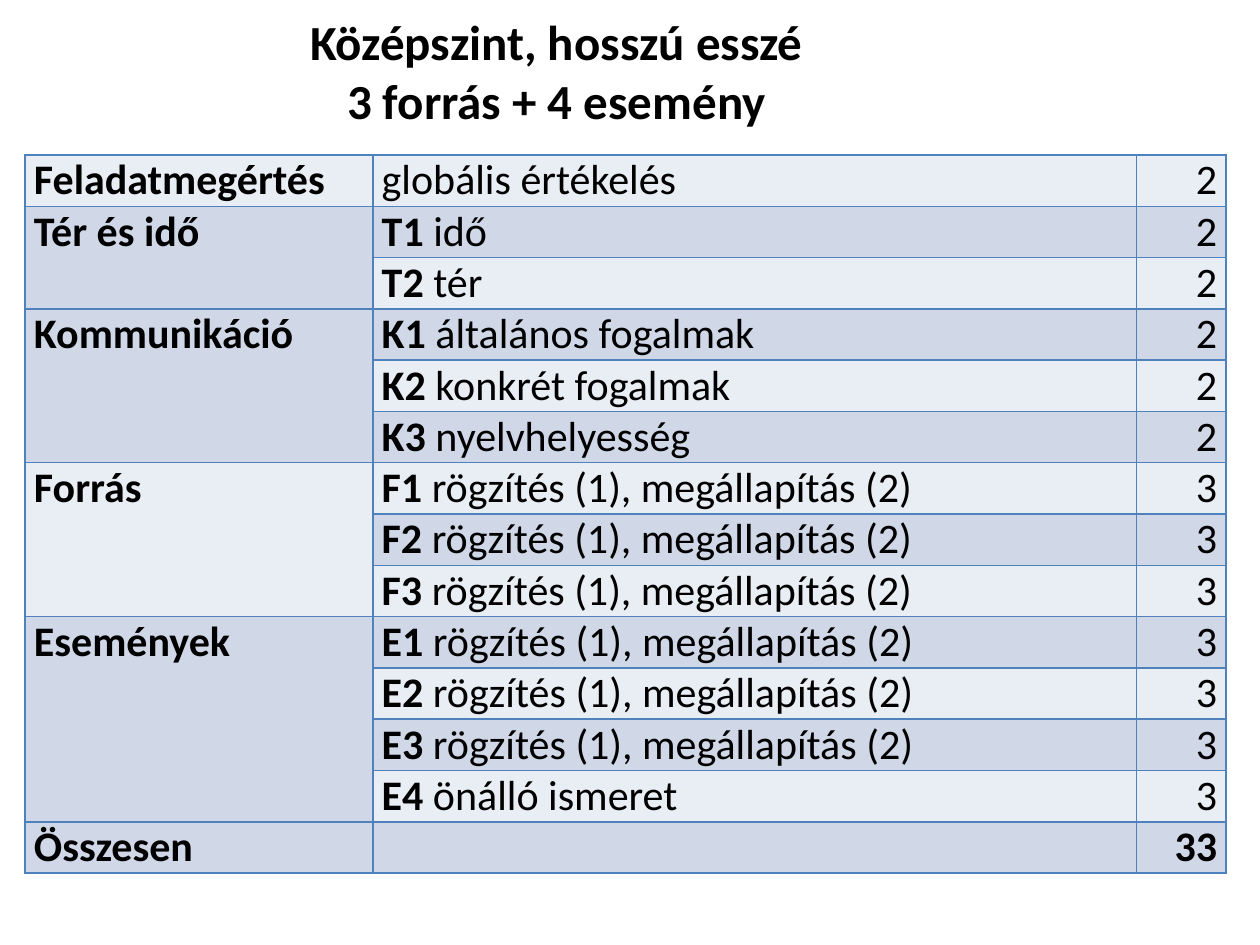
"""Build a slide with the scoring table of a long essay."""
from dataclasses import dataclass

from lxml.etree import SubElement
from pptx import Presentation
from pptx.dml.color import RGBColor
from pptx.enum.text import MSO_ANCHOR, MSO_AUTO_SIZE, PP_ALIGN
from pptx.oxml.ns import qn
from pptx.util import Inches, Pt

COLOURS = {"text": "000000", "light": "E9EDF4", "dark": "D0D8E8", "border": "4F81BD"}
FONT = "Calibri"
COLUMN_WIDTHS = (2.76, 6.06, 0.71)
ROW_HEIGHT = 0.4
TITLE_LINES = ("Középszint, hosszú esszé", "3 forrás + 4 esemény")
SOURCE_TASK = " rögzítés (1), megállapítás (2)"


@dataclass(frozen=True)
class Criterion:
    """One scored line of the table."""
    code: str
    label: str
    points: int


@dataclass(frozen=True)
class Group:
    """A heading with the criteria it spans."""
    heading: str
    criteria: tuple[Criterion, ...]
    is_total: bool = False


GROUPS = (
    Group("Feladatmegértés", (Criterion("", "globális értékelés", 2),)),
    Group("Tér és idő", (Criterion("T1", " idő", 2), Criterion("T2", " tér", 2))),
    Group("Kommunikáció", (
        Criterion("K1", " általános fogalmak", 2),
        Criterion("K2", " konkrét fogalmak", 2),
        Criterion("K3", " nyelvhelyesség", 2),
    )),
    Group("Forrás", tuple(Criterion(f"F{number}", SOURCE_TASK, 3) for number in (1, 2, 3))),
    Group("Események", (
        *(Criterion(f"E{number}", SOURCE_TASK, 3) for number in (1, 2, 3)),
        Criterion("E4", " önálló ismeret", 3),
    )),
    Group("Összesen", (Criterion("", "", 33),), is_total=True),
)


def add_span(para, text: str, size: float, bold: bool) -> None:
    """Add one run of text unless it is empty."""
    if not text:
        return
    span = para.add_run()
    span.text = text
    span.font.name = FONT
    span.font.size = Pt(size)
    span.font.bold = bold
    span.font.color.rgb = RGBColor.from_string(COLOURS["text"])


def style_cell(cell, fill: str) -> None:
    """Give a cell its margins, borders and fill."""
    cell.margin_left = cell.margin_right = Inches(0.07)
    cell.margin_top = cell.margin_bottom = Inches(0)
    properties = cell._tc.get_or_add_tcPr()
    for side in ("a:lnL", "a:lnR", "a:lnT", "a:lnB"):
        line = SubElement(properties, qn(side), w=str(Pt(1)))
        solid = SubElement(line, qn("a:solidFill"))
        SubElement(solid, qn("a:srgbClr"), val=COLOURS["border"])
    cell.fill.solid()
    cell.fill.fore_color.rgb = RGBColor.from_string(COLOURS[fill])


def add_title(page) -> None:
    """Add the two centred title lines."""
    box = page.shapes.add_textbox(Inches(2.34), Inches(0.04), Inches(4.15), Inches(1.04))
    frame = box.text_frame
    frame.word_wrap = False
    frame.auto_size = MSO_AUTO_SIZE.SHAPE_TO_FIT_TEXT
    frame.vertical_anchor = MSO_ANCHOR.MIDDLE
    for index, text in enumerate(TITLE_LINES):
        para = frame.add_paragraph() if index else frame.paragraphs[0]
        para.alignment = PP_ALIGN.CENTER
        add_span(para, text, 28, True)


def add_scores(page) -> None:
    """Add the score table with banded rows and merged headings."""
    row_count = sum(len(group.criteria) for group in GROUPS)
    table = page.shapes.add_table(
        row_count, len(COLUMN_WIDTHS), Inches(0.2), Inches(1.23),
        Inches(sum(COLUMN_WIDTHS)), Inches(row_count * ROW_HEIGHT),
    ).table
    table.first_row = table.horz_banding = False
    for column, width in zip(table.columns, COLUMN_WIDTHS):
        column.width = Inches(width)
    for index, row in enumerate(table.rows):
        row.height = Inches(ROW_HEIGHT)
        for cell in row.cells:
            style_cell(cell, "dark" if index % 2 else "light")
    top = 0
    for group in GROUPS:
        heading = table.cell(top, 0)
        if len(group.criteria) > 1:
            heading.merge(table.cell(top + len(group.criteria) - 1, 0))
        add_span(heading.text_frame.paragraphs[0], group.heading, 24, True)
        for index, criterion in enumerate(group.criteria, top):
            para = table.cell(index, 1).text_frame.paragraphs[0]
            add_span(para, criterion.code, 24, True)
            add_span(para, criterion.label, 24, False)
            para = table.cell(index, 2).text_frame.paragraphs[0]
            para.alignment = PP_ALIGN.RIGHT
            add_span(para, str(criterion.points), 24, group.is_total)
        top += len(group.criteria)


def main() -> None:
    """Build and save the deck."""
    deck = Presentation()
    deck.slide_width, deck.slide_height = Inches(10), Inches(7.5)
    page = deck.slides.add_slide(deck.slide_layouts[6])
    add_scores(page)
    add_title(page)
    deck.save("out.pptx")


if __name__ == "__main__":
    main()
